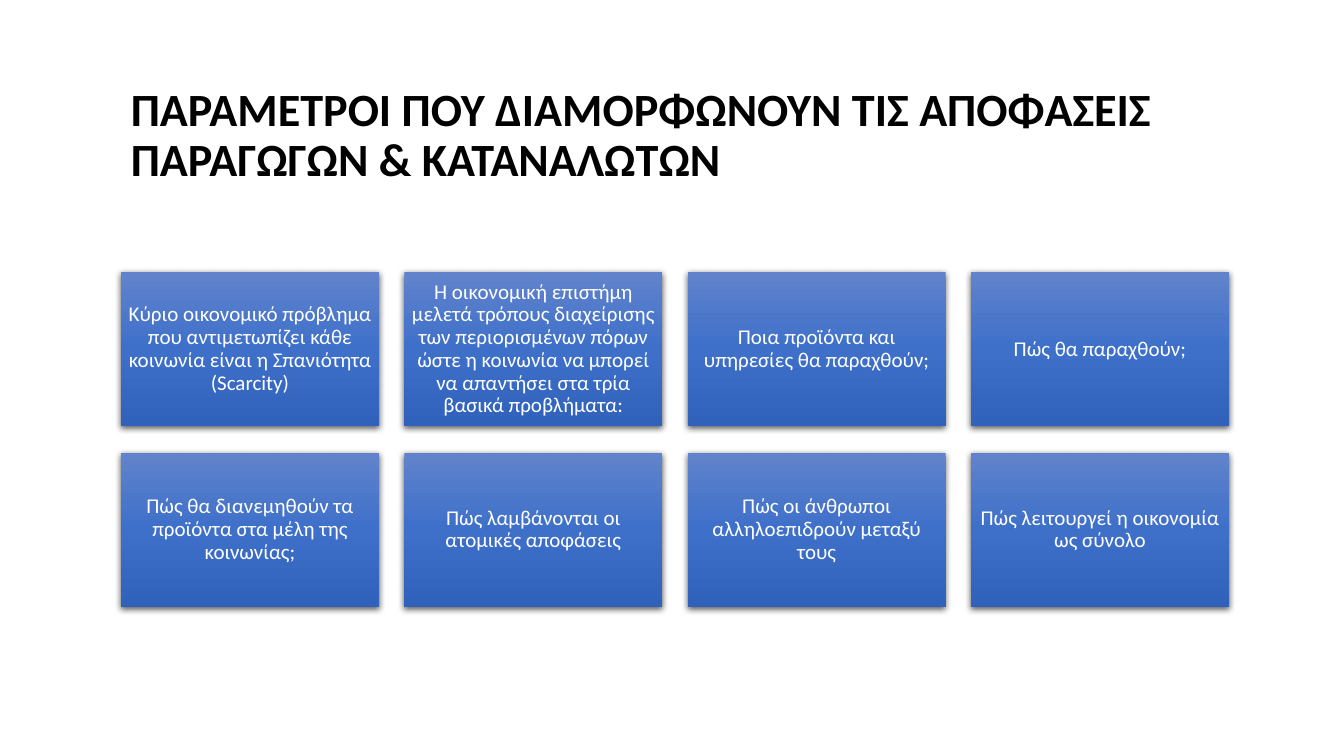
import pptx
import pptx.util
import pptx.oxml
import pptx.oxml.ns
import pptx.dml.color
import pptx.enum.shapes
import pptx.enum.text

Inches, Pt = pptx.util.Inches, pptx.util.Pt
COLORS = {"title": "000000", "text": "FFFFFF", "shadow": "000000",
          "top": "6183CB", "middle": "3E70CA", "bottom": "3062BB"}
FONT = "Calibri"
NS = pptx.oxml.ns.nsdecls("a")

# Card grid, in inches
LEFT, TOP = 1.2, 2.7
COLUMNS = 4
CARD_W, CARD_H = 2.56, 1.53
STEP_X, STEP_Y = 2.81, 1.79

CARDS = [
    "Κύριο οικονομικό πρόβλημα που αντιμετωπίζει κάθε κοινωνία είναι η Σπανιότητα (Scarcity)",
    "Η οικονομική επιστήμη μελετά τρόπους διαχείρισης των περιορισμένων πόρων "
    "ώστε η κοινωνία να μπορεί να απαντήσει στα τρία βασικά προβλήματα:",
    "Ποια προϊόντα και υπηρεσίες θα παραχθούν;",
    "Πώς θα παραχθούν;",
    "Πώς θα διανεμηθούν τα προϊόντα στα μέλη της κοινωνίας;",
    "Πώς λαμβάνονται οι ατομικές αποφάσεις",
    "Πώς οι άνθρωποι αλληλοεπιδρούν μεταξύ τους",
    "Πώς λειτουργεί η οικονομία ως σύνολο",
]

STOPS = "".join(
    f'<a:gs pos="{pos}"><a:srgbClr val="{COLORS[name]}"/></a:gs>'
    for pos, name in ((0, "top"), (50000, "middle"), (100000, "bottom")))
GRADIENT = (f'<a:gradFill {NS} rotWithShape="1"><a:gsLst>{STOPS}</a:gsLst>'
            '<a:lin ang="5400000" scaled="0"/></a:gradFill>')
SHADOW = (f'<a:outerShdw {NS} blurRad="{Pt(4.5)}" dist="{Pt(1.5)}" dir="5400000" '
          f'algn="ctr" rotWithShape="0"><a:srgbClr val="{COLORS["shadow"]}">'
          '<a:alpha val="63000"/></a:srgbClr></a:outerShdw>')


def write(tf, text, size, color, anchor, align):
    tf.word_wrap = True
    tf.vertical_anchor = anchor
    p = tf.paragraphs[0]
    p.text = text
    p.alignment = align
    p.line_spacing = 0.9
    p.font.name = FONT
    p.font.size = Pt(size)
    p.font.color.rgb = pptx.dml.color.RGBColor.from_string(color)
    return p


prs = pptx.Presentation()
prs.slide_width, prs.slide_height = Inches(13.33), Inches(7.5)
s = prs.slides.add_slide(prs.slide_layouts[6])

# Title
sp = s.shapes.add_textbox(Inches(LEFT), Inches(0.31), Inches(11), Inches(1.59))
p = write(sp.text_frame, "ΠΑΡΑΜΕΤΡΟΙ ΠΟΥ ΔΙΑΜΟΡΦΩΝΟΥΝ ΤΙΣ ΑΠΟΦΑΣΕΙΣ ΠΑΡΑΓΩΓΩΝ & ΚΑΤΑΝΑΛΩΤΩΝ",
          33, COLORS["title"], pptx.enum.text.MSO_ANCHOR.BOTTOM, pptx.enum.text.PP_ALIGN.LEFT)
p.font.bold = True

# Cards
for i, text in enumerate(CARDS):
    row, col = divmod(i, COLUMNS)
    sp = s.shapes.add_shape(pptx.enum.shapes.MSO_SHAPE.RECTANGLE,
                            Inches(LEFT + col * STEP_X), Inches(TOP + row * STEP_Y),
                            Inches(CARD_W), Inches(CARD_H))
    sp.line.fill.background()
    sp.shadow.inherit = False
    props = sp.element.spPr
    props.find(pptx.oxml.ns.qn("a:prstGeom")).addnext(pptx.oxml.parse_xml(GRADIENT))
    props.find(pptx.oxml.ns.qn("a:effectLst")).append(pptx.oxml.parse_xml(SHADOW))
    tf = sp.text_frame
    tf.margin_left = tf.margin_right = tf.margin_top = tf.margin_bottom = Inches(0.06)
    write(tf, text, 15, COLORS["text"],
          pptx.enum.text.MSO_ANCHOR.MIDDLE, pptx.enum.text.PP_ALIGN.CENTER)

prs.save("out.pptx")
